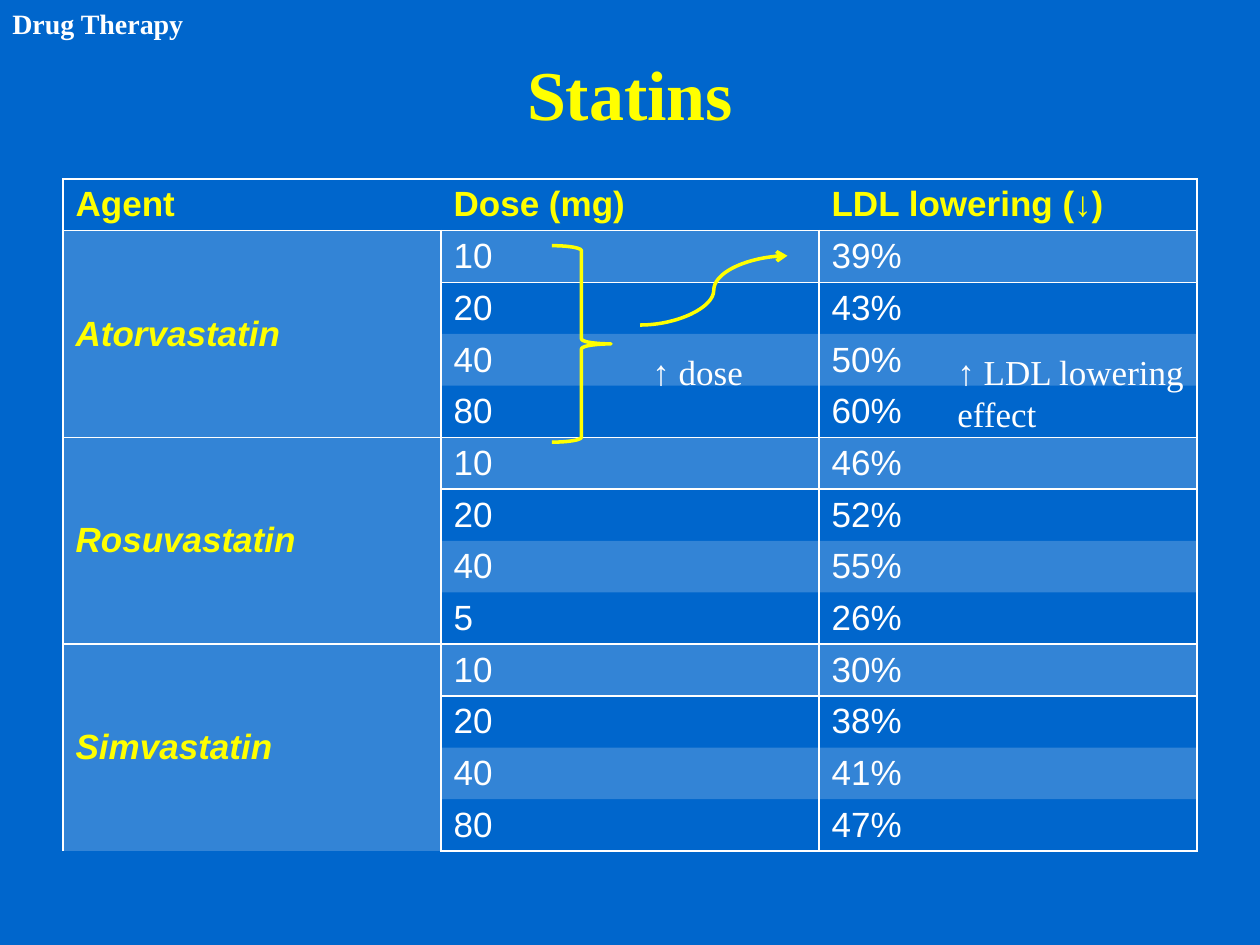
"""Build the slide on statin doses and their LDL lowering."""
from dataclasses import dataclass

from lxml.etree import SubElement
from pptx import Presentation
from pptx.dml.color import RGBColor
from pptx.enum.shapes import MSO_CONNECTOR, MSO_SHAPE
from pptx.enum.text import MSO_ANCHOR, MSO_AUTO_SIZE, PP_ALIGN
from pptx.oxml import parse_xml
from pptx.oxml.ns import nsdecls, qn
from pptx.util import Inches, Pt

COLORS = {"background": "0066CC", "accent": "FFFF00", "text": "FFFFFF", "shadow": "003366"}
SERIF, SANS = "Times New Roman", "Arial"
TITLE = {"name": SERIF, "size": Pt(40), "bold": True}
TAG = {"name": SERIF, "size": Pt(16), "bold": True}
NOTE = {"name": SERIF, "size": Pt(20), "bold": False}
VALUE = {"name": SANS, "size": Pt(20), "bold": False}
HEADER = VALUE | {"bold": True}
AGENT = HEADER | {"italic": True}
NO_STYLE = "{2D5ABB26-0587-4C30-8999-92F81FD0307C}"
HEADINGS = ("Agent", "Dose (mg)", "LDL lowering (↓)")
ROW_HEIGHT = 0.41


@dataclass
class Statin:
    name: str
    results: tuple[tuple[str, str], ...]
    ruled: bool = True


@dataclass
class Label:
    text: str
    left: float
    top: float
    width: float
    height: float
    style: dict
    wrap: bool = True


STATINS = (
    Statin("Atorvastatin", (("10", "39%"), ("20", "43%"), ("40", "50%"), ("80", "60%")), False),
    Statin("Rosuvastatin", (("10", "46%"), ("20", "52%"), ("40", "55%"), ("5", "26%"))),
    Statin("Simvastatin", (("10", "30%"), ("20", "38%"), ("40", "41%"), ("80", "47%"))),
)
LABELS = (
    Label("Drug Therapy", 0, 0, 1.57, 0.37, TAG, False),
    Label("↑ dose", 5.08, 2.73, 1.17, 0.44, NOTE),
    Label("↑ LDL lowering effect", 7.5, 2.73, 2.03, 0.77, NOTE),
)


def rgb(color: str) -> RGBColor:
    return RGBColor.from_string(COLORS[color])


def write(frame, text: str, style: dict, color: str) -> None:
    frame.text = text
    font = frame.paragraphs[0].runs[0].font
    for attribute, value in style.items():
        setattr(font, attribute, value)
    font.color.rgb = rgb(color)


def add_title(slide) -> None:
    title = slide.shapes.title
    title.left, title.top, title.width, title.height = map(Inches, (0.5, 0.3, 9, 0.87))
    frame = title.text_frame
    frame.auto_size = MSO_AUTO_SIZE.NONE
    frame.vertical_anchor = MSO_ANCHOR.MIDDLE
    write(frame, "Statins", TITLE, "accent")
    frame.paragraphs[0].alignment = PP_ALIGN.CENTER
    properties = frame.paragraphs[0].runs[0].font._element
    properties.find(qn("a:solidFill")).addnext(parse_xml(
        f'<a:effectLst {nsdecls("a")}><a:outerShdw dist="88900" dir="2400000" algn="tl">'
        f'<a:srgbClr val="{COLORS["shadow"]}"/></a:outerShdw></a:effectLst>'))


def style_cell(cell, text: str, style: dict, color: str, sides: str, tinted: bool) -> None:
    cell.vertical_anchor = MSO_ANCHOR.MIDDLE
    if text:
        write(cell.text_frame, text, style, color)
    properties = cell._tc.get_or_add_tcPr()
    for side in sides:
        border = SubElement(properties, qn(f"a:ln{side}"), w=str(Pt(1)))
        fill = SubElement(border, qn("a:solidFill"))
        SubElement(fill, qn("a:srgbClr"), val=COLORS["text"])
    if tinted:
        cell.fill.solid()
        cell.fill.fore_color.rgb = rgb("text")
        tint = properties.find(qn("a:solidFill"))[0]
        SubElement(tint, qn("a:alpha"), val="20000")
    else:
        cell.fill.background()


def add_statin(table, first: int, statin: Statin) -> None:
    last = len(statin.results) - 1
    for index, (dose, lowering) in enumerate(statin.results):
        row = first + index
        edges = ("T" if index == 0 else "") + ("B" if index == last else "")
        rule = "B" if statin.ruled and index == 0 else ""
        agent = statin.name if index == 0 else ""
        style_cell(table.cell(row, 0), agent, AGENT, "accent", "LR" + edges, True)
        for column, value in enumerate((dose, lowering), 1):
            style_cell(table.cell(row, column), value, VALUE, "text",
                       "LR" + edges + rule, index % 2 == 0)
    table.cell(first, 0).merge(table.cell(first + last, 0))


def add_statin_table(slide) -> None:
    rows = 1 + sum(len(statin.results) for statin in STATINS)
    table = slide.shapes.add_table(rows, len(HEADINGS), Inches(0.5), Inches(1.42),
                                   Inches(9), Inches(ROW_HEIGHT * rows)).table
    table.horz_banding = False
    table._tbl.tblPr.find(qn("a:tableStyleId")).text = NO_STYLE
    for row in table.rows:
        row.height = Inches(ROW_HEIGHT)
    for column, (heading, sides) in enumerate(zip(HEADINGS, ("LTB", "TB", "RTB"))):
        style_cell(table.cell(0, column), heading, HEADER, "accent", sides, False)
    first = 1
    for statin in STATINS:
        add_statin(table, first, statin)
        first += len(statin.results)


def add_label(slide, label: Label) -> None:
    place = map(Inches, (label.left, label.top, label.width, label.height))
    frame = slide.shapes.add_textbox(*place).text_frame
    frame.word_wrap = label.wrap
    frame.auto_size = MSO_AUTO_SIZE.SHAPE_TO_FIT_TEXT
    write(frame, label.text, label.style, "text")


def draw_accent_line(line) -> None:
    line.color.rgb = rgb("accent")
    line.width = Pt(2)


def add_dose_brace(slide) -> None:
    place = map(Inches, (4.38, 1.95, 0.47, 1.56))
    brace = slide.shapes.add_shape(MSO_SHAPE.RIGHT_BRACE, *place)
    brace.shadow.inherit = False
    brace.fill.background()
    draw_accent_line(brace.line)


def add_rising_arrow(slide) -> None:
    ends = map(Inches, (5.08, 2.58, 6.25, 2.03))
    arrow = slide.shapes.add_connector(MSO_CONNECTOR.CURVE, *ends)
    draw_accent_line(arrow.line)
    properties = arrow._element.spPr
    SubElement(properties.find(qn("a:ln")), qn("a:tailEnd"), type="arrow")
    SubElement(properties, qn("a:effectLst"))


def main() -> None:
    deck = Presentation()
    deck.slide_width, deck.slide_height = Inches(10), Inches(7.5)
    slide = deck.slides.add_slide(deck.slide_layouts.get_by_name("Title Only"))
    slide.background.fill.solid()
    slide.background.fill.fore_color.rgb = rgb("background")
    add_title(slide)
    add_statin_table(slide)
    add_dose_brace(slide)
    add_rising_arrow(slide)
    for label in LABELS:
        add_label(slide, label)
    deck.save("out.pptx")


if __name__ == "__main__":
    main()
